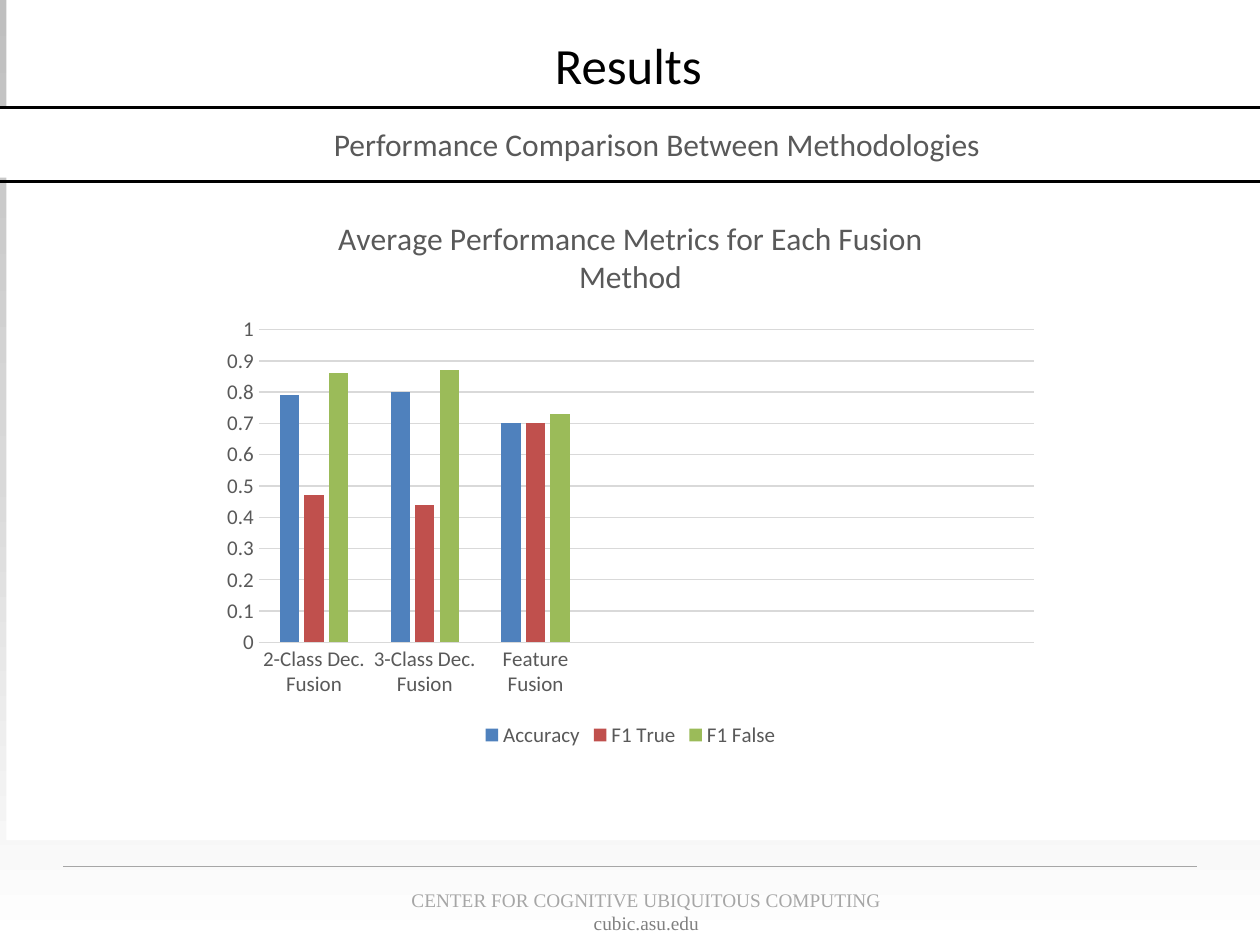
import dataclasses

import lxml.etree
import pptx
import pptx.chart.data
import pptx.dml.color
import pptx.enum.chart
import pptx.enum.shapes
import pptx.enum.text
import pptx.oxml
import pptx.oxml.ns
import pptx.util

Cm, Pt = pptx.util.Cm, pptx.util.Pt
KINDS = pptx.enum.shapes.MSO_SHAPE


@dataclasses.dataclass(frozen=True)
class Theme:
    """Hold the colours, fonts and type sizes."""
    white: str = "FFFFFF"
    black: str = "000000"
    text: str = "595959"
    grid: str = "D9D9D9"
    rule: str = "A6A6A6"
    link: str = "808080"
    fade: tuple = ((0, "BFBFBF"), (50, "D9D9D9"), (100, "FFFFFF"))
    bars: tuple = ("4F81BD", "C0504D", "9BBB59")
    sans: str = "Calibri"
    serif: str = "Times New Roman"
    title: float = 29
    head: float = 18
    label: float = 12
    foot: float = 11


THEME = Theme()


def color(code):
    """Turn a hex code into a colour."""
    return pptx.dml.color.RGBColor.from_string(code)


def style(font, size, face, code):
    """Set size, face and colour of a font."""
    font.size, font.name, font.bold = Pt(size), face, False
    font.color.rgb = color(code)


def add_box(shapes, kind, box, fill=None):
    """Add a plain shape without outline or shadow."""
    shape = shapes.add_shape(kind, *map(Cm, box))
    shape.shadow.inherit = False
    shape.line.fill.background()
    if fill:
        shape.fill.solid()
        shape.fill.fore_color.rgb = color(fill)
    else:
        shape.fill.background()
    return shape


def add_fade(shape, stops):
    """Fill a shape with a gradient from top to bottom."""
    shape.fill.gradient()
    shape.fill.gradient_angle = 270
    grad = shape._element.spPr.find(pptx.oxml.ns.qn("a:gradFill"))
    group = grad.find(pptx.oxml.ns.qn("a:gsLst"))
    for stop in list(group):
        group.remove(stop)
    for place, code in stops:
        stop = lxml.etree.SubElement(group, pptx.oxml.ns.qn("a:gs"), pos=str(place * 1000))
        lxml.etree.SubElement(stop, pptx.oxml.ns.qn("a:srgbClr"), val=code)


def add_rule(shapes, left, right, y, code, width):
    """Add a level line."""
    line = shapes.add_connector(pptx.enum.shapes.MSO_CONNECTOR.STRAIGHT,
                                Cm(left), Cm(y), Cm(right), Cm(y))
    line.line.color.rgb = color(code)
    line.line.width = Pt(width)
    lxml.etree.SubElement(line._element.spPr, pptx.oxml.ns.qn("a:effectLst"))


def write(shape, rows, size, face, indent=None):
    """Write centred rows of text and colour into a shape."""
    frame = shape.text_frame
    frame.word_wrap = True
    frame.vertical_anchor = pptx.enum.text.MSO_ANCHOR.TOP
    for at, (text, code) in enumerate(rows):
        para = frame.add_paragraph() if at else frame.paragraphs[0]
        para.alignment = pptx.enum.text.PP_ALIGN.CENTER
        if indent:
            para._p.get_or_add_pPr().set("marL", str(Cm(indent)))
        run = para.add_run()
        run.text = text
        style(run.font, size, face, code)


def add_text(shapes, box, *args):
    """Add a text box."""
    write(shapes.add_textbox(*map(Cm, box)), *args)


def style_axes(chart):
    """Style both axes and the grid."""
    for axis in (chart.category_axis, chart.value_axis):
        axis.major_tick_mark = pptx.enum.chart.XL_TICK_MARK.NONE
        axis.minor_tick_mark = pptx.enum.chart.XL_TICK_MARK.NONE
        style(axis.tick_labels.font, THEME.label, THEME.sans, THEME.text)
    scale = chart.value_axis
    scale.minimum_scale, scale.maximum_scale, scale.major_unit = 0, 1, 0.1
    scale.format.line.fill.background()
    scale.has_major_gridlines = True
    for part in (chart.category_axis, scale.major_gridlines):
        part.format.line.color.rgb = color(THEME.grid)
        part.format.line.width = Pt(0.75)


def add_chart(shapes, box, title, cats, series):
    """Add the clustered column chart."""
    data = pptx.chart.data.CategoryChartData()
    data.categories = cats
    for name, vals in series:
        data.add_series(name, vals + [None] * (len(cats) - len(vals)))
    kind = pptx.enum.chart.XL_CHART_TYPE.COLUMN_CLUSTERED
    chart = shapes.add_chart(kind, *map(Cm, box), data).chart
    style(chart.font, 10, THEME.sans, THEME.black)
    chart.has_title = True
    run = chart.chart_title.text_frame.paragraphs[0].add_run()
    run.text = title
    style(run.font, THEME.head, THEME.sans, THEME.text)
    chart.chart_title.include_in_layout = False
    chart.has_legend = True
    chart.legend.position = pptx.enum.chart.XL_LEGEND_POSITION.BOTTOM
    chart.legend.include_in_layout = False
    style(chart.legend.font, THEME.label, THEME.sans, THEME.text)
    plot = chart.plots[0]
    plot.gap_width, plot.overlap, plot.vary_by_categories = 219, -27, False
    for bars, code in zip(plot.series, THEME.bars):
        bars.format.fill.solid()
        bars.format.fill.fore_color.rgb = color(code)
    style_axes(chart)


def main():
    """Build and save the slide."""
    deck = pptx.Presentation()
    deck.slide_width, deck.slide_height = Cm(25.4), Cm(19.05)
    shapes = deck.slides.add_slide(deck.slide_layouts[6]).shapes

    add_fade(add_box(shapes, KINDS.RECTANGLE, (0, 0, 25.4, 19.05)), THEME.fade)
    add_text(shapes, (5.51, 17.78, 15.04, 1.19),
             [("CENTER FOR COGNITIVE UBIQUITOUS COMPUTING", THEME.rule),
              ("cubic.asu.edu", THEME.link)], THEME.foot, THEME.serif)
    add_rule(shapes, 1.27, 24.13, 17.47, THEME.rule, 0.75)
    add_box(shapes, KINDS.RECTANGLE, (0.13, 0, 25.4, 16.94), THEME.white)
    title = add_box(shapes, KINDS.ROUNDED_RECTANGLE, (1.24, 0.43, 22.86, 2.41))
    write(title, [("Results", THEME.black)], THEME.title, THEME.sans)

    band = shapes.add_group_shape().shapes
    add_box(band, KINDS.ROUNDED_RECTANGLE, (-2.54, 2.16, 29.64, 1.42), THEME.white)
    for y in (2.16, 3.66):
        add_rule(band, -1.9, 25.4, y, THEME.black, 1.75)
    add_text(shapes, (0.25, 2.39, 25.35, 1.02),
             [("Performance Comparison Between Methodologies", THEME.text)],
             THEME.head, THEME.sans, 0.64)

    add_chart(shapes, (4.24, 3.89, 16.94, 11.28),
              "Average Performance Metrics for Each Fusion Method",
              ["2-Class Dec. Fusion", "3-Class Dec. Fusion", "Feature Fusion"] + [""] * 4,
              [("Accuracy", [0.79, 0.8, 0.7]),
               ("F1 True", [0.47, 0.44, 0.7]),
               ("F1 False", [0.86, 0.87, 0.73])])
    deck.save("out.pptx")


if __name__ == "__main__":
    main()
